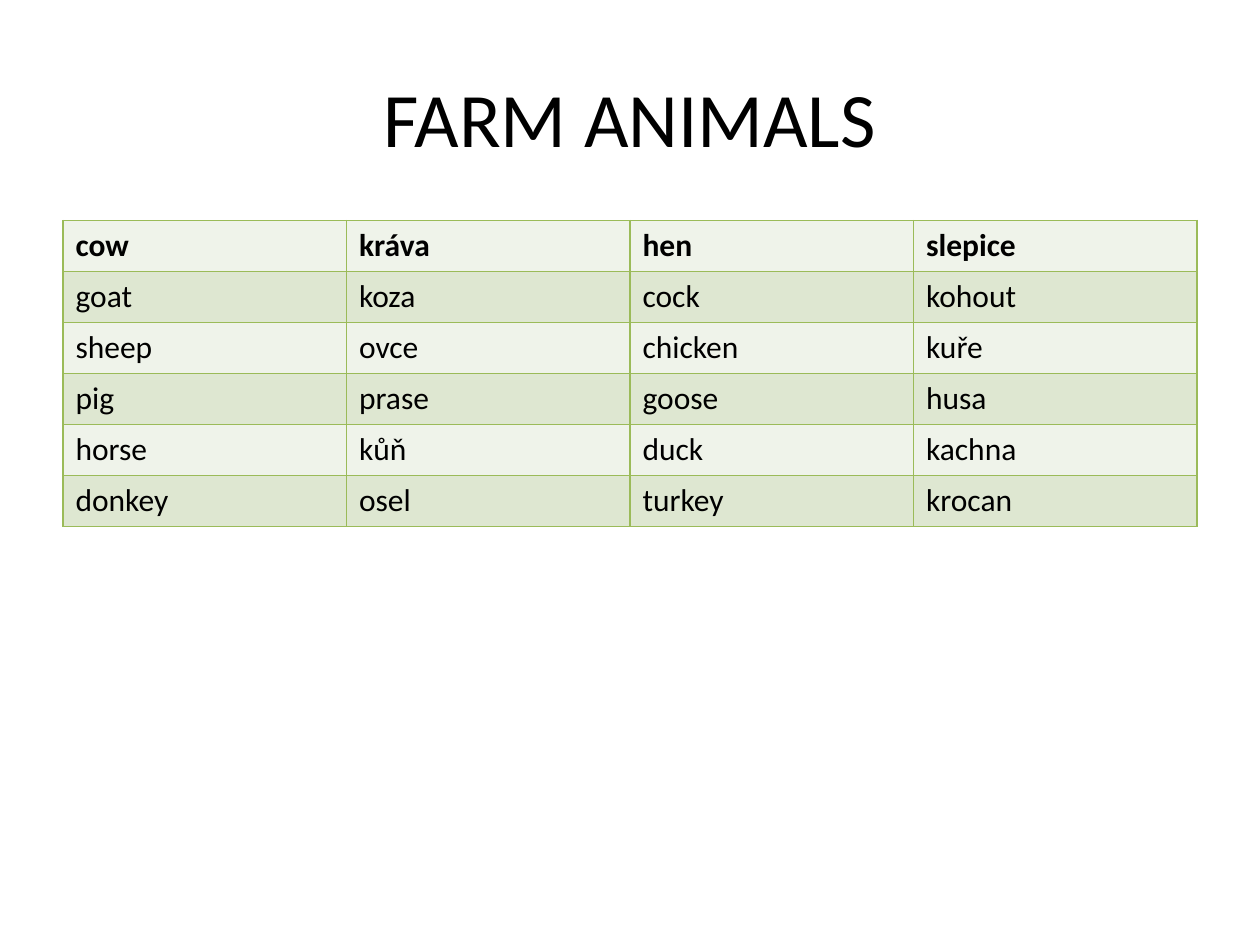
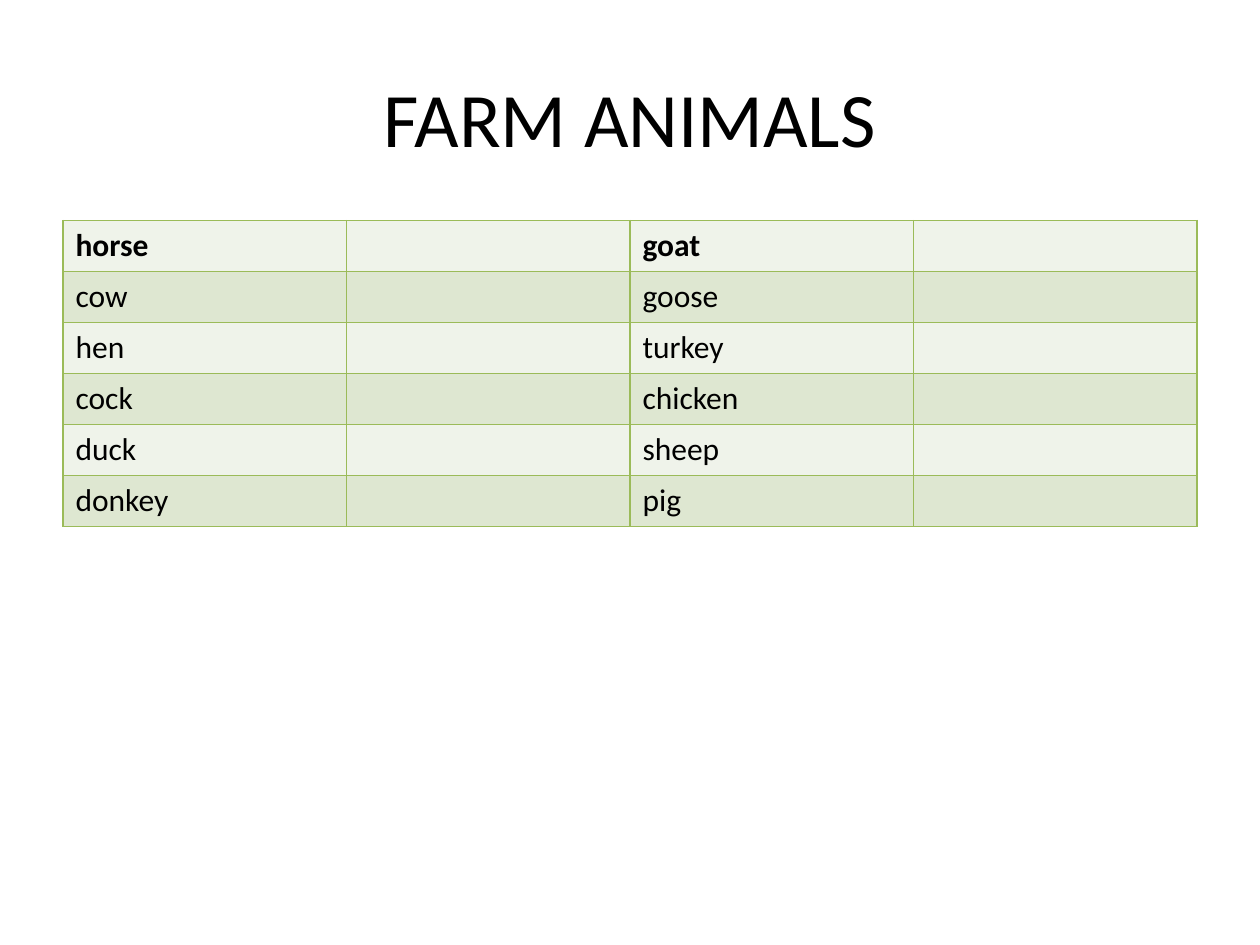
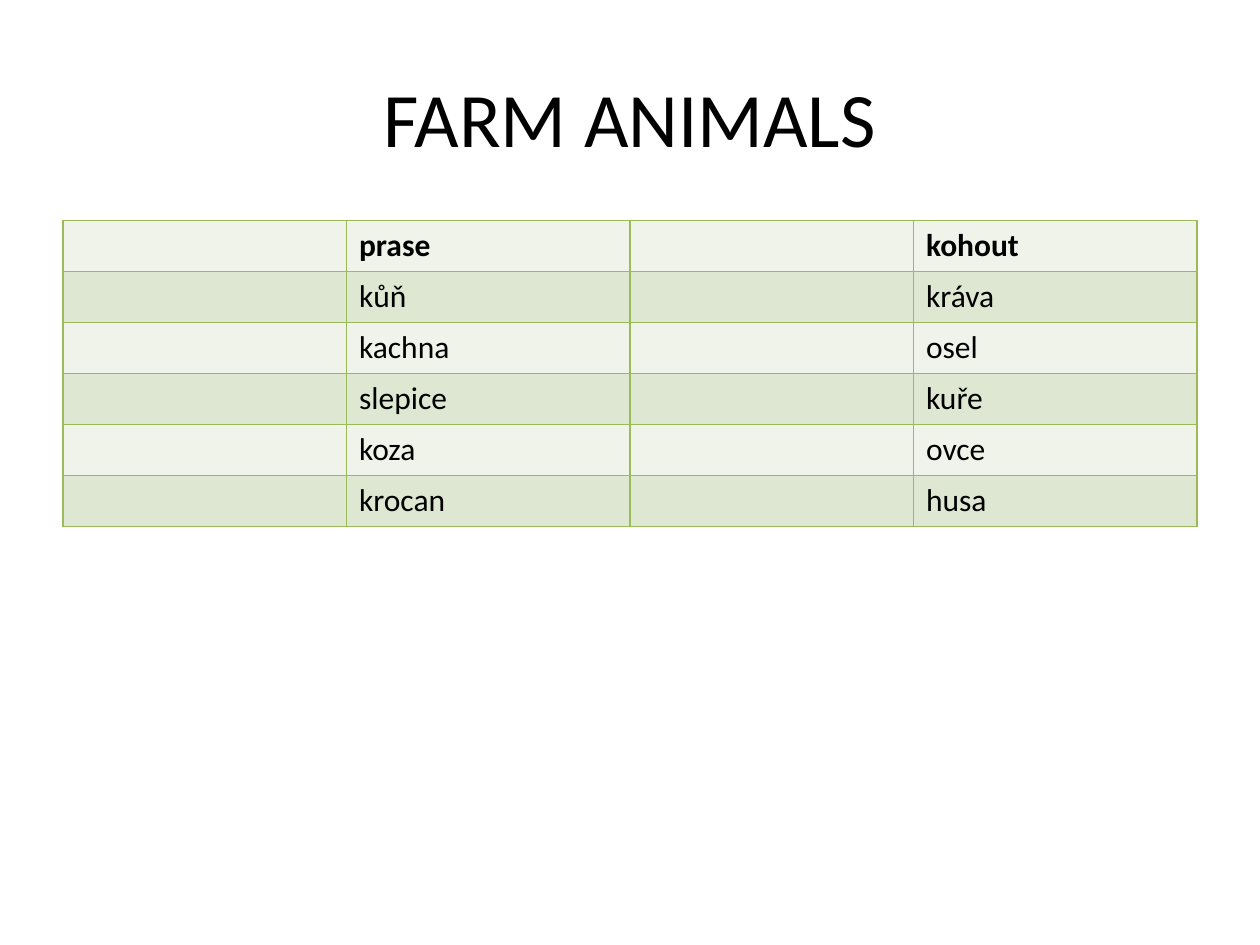
from lxml.etree import SubElement
from pptx import Presentation
from pptx.dml.color import RGBColor
from pptx.enum.text import MSO_ANCHOR, PP_ALIGN
from pptx.oxml.ns import qn
from pptx.util import Inches, Pt

BLACK = RGBColor(0x00, 0x00, 0x00)
GREEN = RGBColor(0x9B, 0xBB, 0x59)
BANDS = (RGBColor(0xEF, 0xF3, 0xEA), RGBColor(0xDE, 0xE7, 0xD1))

WIDTH, HEIGHT = Inches(10), Inches(7.5)
MARGIN = int(WIDTH * 0.05)
CONTENT_W = WIDTH - 2 * MARGIN
TITLE_TOP, TITLE_H = int(HEIGHT * 0.04), HEIGHT // 6
TABLE_TOP, TABLE_H = Inches(1.75), Inches(2.43)

TITLE = "FARM ANIMALS"
TITLE_FONT = {"name": "Calibri", "size": Pt(44), "bold": False}
CELL_FONT = {"name": "Calibri", "size": Pt(18), "bold": False}
HEAD_FONT = {**CELL_FONT, "bold": True}

VOCABULARY = [
    ("cow", "kráva", "hen", "slepice"),
    ("goat", "koza", "cock", "kohout"),
    ("sheep", "ovce", "chicken", "kuře"),
    ("pig", "prase", "goose", "husa"),
    ("horse", "kůň", "duck", "kachna"),
    ("donkey", "osel", "turkey", "krocan"),
]
ENGLISH = [
    ("horse", "goat"),
    ("cow", "goose"),
    ("hen", "turkey"),
    ("cock", "chicken"),
    ("duck", "sheep"),
    ("donkey", "pig"),
]
CZECH = [
    ("prase", "kohout"),
    ("kůň", "kráva"),
    ("kachna", "osel"),
    ("slepice", "kuře"),
    ("koza", "ovce"),
    ("krocan", "husa"),
]


def add_run(p, text, font):
    """Add black text in the given font to a paragraph."""
    r = p.add_run()
    r.text = text
    for name, value in font.items():
        setattr(r.font, name, value)
    r.font.color.rgb = BLACK


def add_title(s, text):
    """Add the centred slide title."""
    tf = s.shapes.add_textbox(MARGIN, TITLE_TOP, CONTENT_W, TITLE_H).text_frame
    tf.word_wrap = True
    tf.vertical_anchor = MSO_ANCHOR.MIDDLE
    p = tf.paragraphs[0]
    p.alignment = PP_ALIGN.CENTER
    add_run(p, text, TITLE_FONT)


def set_borders(cell, color, width):
    """Draw a solid line on all four sides of a cell."""
    tc_pr = cell._tc.get_or_add_tcPr()
    for side in ("a:lnL", "a:lnR", "a:lnT", "a:lnB"):
        ln = SubElement(tc_pr, qn(side), w=str(width))
        fill = SubElement(ln, qn("a:solidFill"))
        SubElement(fill, qn("a:srgbClr"), val=str(color))


def add_word_table(s, rows):
    """Add a banded table of words with a bold first row."""
    table = s.shapes.add_table(len(rows), len(rows[0]), MARGIN, TABLE_TOP,
                               CONTENT_W, TABLE_H).table
    table.first_row = table.horz_banding = False
    for i, row in enumerate(rows):
        for j, word in enumerate(row):
            cell = table.cell(i, j)
            set_borders(cell, GREEN, Pt(1))
            cell.fill.solid()
            cell.fill.fore_color.rgb = BANDS[i % 2]
            if word:
                add_run(cell.text_frame.paragraphs[0], word,
                        CELL_FONT if i else HEAD_FONT)


def main():
    """Build the vocabulary slide and its two exercises."""
    prs = Presentation()
    prs.slide_width, prs.slide_height = WIDTH, HEIGHT
    to_czech = [(left, "", right, "") for left, right in ENGLISH]
    to_english = [("", left, "", right) for left, right in CZECH]
    for rows in (VOCABULARY, to_czech, to_english):
        s = prs.slides.add_slide(prs.slide_layouts[6])
        add_title(s, TITLE)
        add_word_table(s, rows)
    prs.save("out.pptx")


if __name__ == "__main__":
    main()
